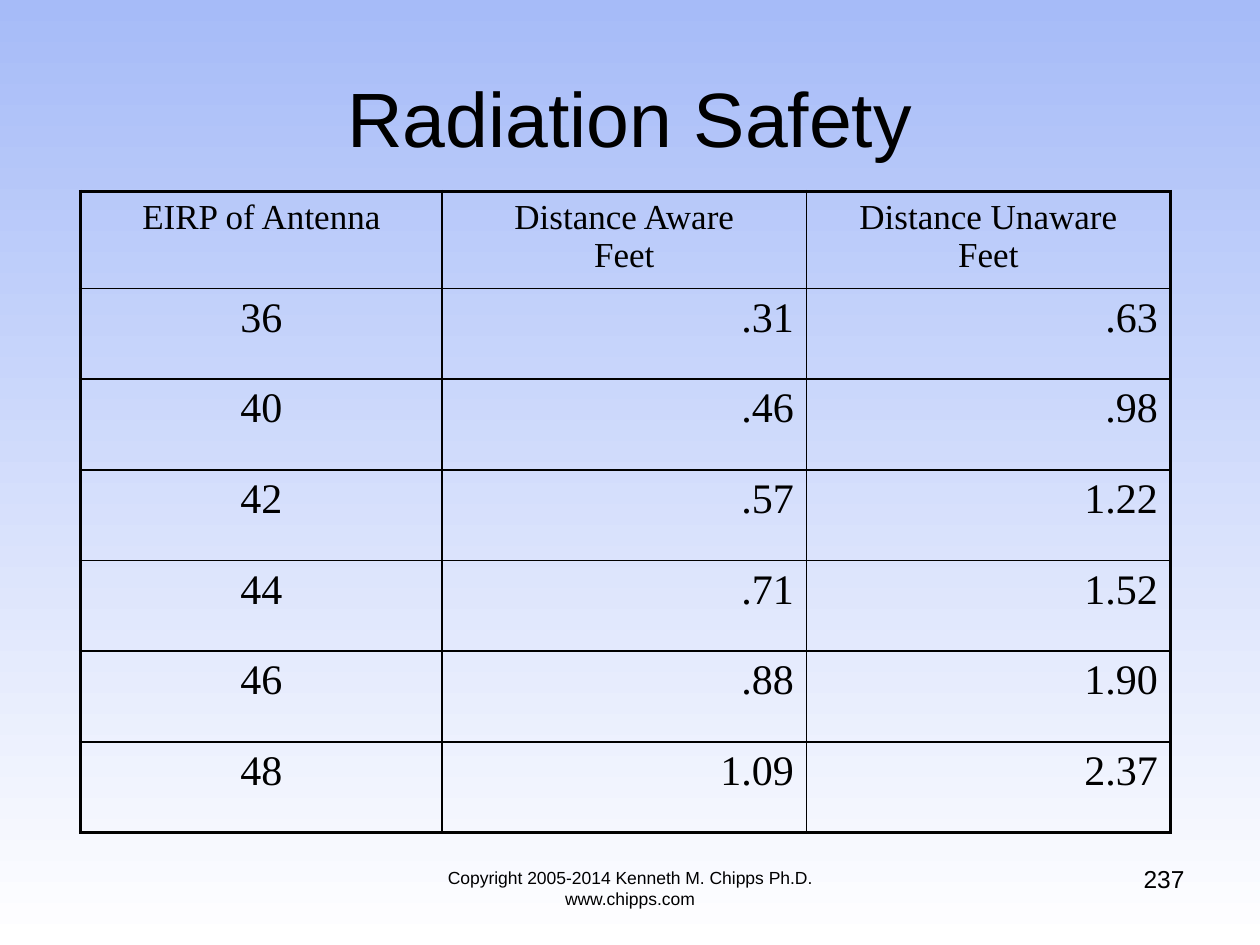
from lxml import etree
from pptx import Presentation
from pptx import util as u
from pptx.dml.color import RGBColor
from pptx.enum import text
from pptx.oxml.ns import qn

TITLE = "Radiation Safety"
HEADER = ("EIRP of Antenna", "Distance Aware\vFeet", "Distance Unaware\vFeet")
READINGS = [
    ("36", ".31", ".63"),
    ("40", ".46", ".98"),
    ("42", ".57", "1.22"),
    ("44", ".71", "1.52"),
    ("46", ".88", "1.90"),
    ("48", "1.09", "2.37"),
]
COPYRIGHT = "Copyright 2005-2014 Kenneth M. Chipps Ph.D. www.chipps.com"
PAGE = "237"

BLACK, SKY, WHITE = "000000", "A6BBF8", "FFFFFF"
COL_WIDTHS = (2.87, 2.89, 2.89)
HEADER_HEIGHT, ROW_HEIGHT = 0.77, 0.72
THICK, THIN = 2.25, 1
CENTER, RIGHT = text.PP_ALIGN.CENTER, text.PP_ALIGN.RIGHT


def color(value):
    return RGBColor.from_string(value)


def style(tf, font, size, align):
    for p in tf.paragraphs:
        p.alignment = align
        p.font.name, p.font.size = font, u.Pt(size)
        p.font.color.rgb = color(BLACK)


def set_borders(cell, widths):
    """Draw the cell's borders; widths are points for left, right, top, bottom."""
    tc_pr = cell._tc.get_or_add_tcPr()
    for i, (side, width) in enumerate(zip("LRTB", widths)):
        ln = etree.Element(qn(f"a:ln{side}"), w=str(u.Pt(width)))
        fill = etree.SubElement(ln, qn("a:solidFill"))
        etree.SubElement(fill, qn("a:srgbClr"), val=BLACK)
        tc_pr.insert(i, ln)


def add_readings(s):
    rows = [HEADER] + READINGS
    heights = [HEADER_HEIGHT] + [ROW_HEIGHT] * len(READINGS)
    frame = s.shapes.add_table(len(rows), len(HEADER), u.Inches(0.64), u.Inches(1.52),
                               u.Inches(sum(COL_WIDTHS)), u.Inches(sum(heights)))
    table = frame.table
    table.first_row = table.horz_banding = False
    for column, width in zip(table.columns, COL_WIDTHS):
        column.width = u.Inches(width)
    last_r, last_c = len(rows) - 1, len(HEADER) - 1
    for r, (values, height) in enumerate(zip(rows, heights)):
        table.rows[r].height = u.Inches(height)
        for c, value in enumerate(values):
            cell = table.cell(r, c)
            cell.text = value
            cell.fill.background()
            style(cell.text_frame, "Times New Roman", 24 if r else 20,
                  RIGHT if r and c else CENTER)
            outer = (c == 0, c == last_c, r == 0, r == last_r)
            set_borders(cell, [THICK if edge else THIN for edge in outer])


def add_footer(s, words, box, size, align):
    tf = s.shapes.add_textbox(*map(u.Inches, box)).text_frame
    tf.word_wrap = True
    tf.text = words
    style(tf, "Arial", size, align)


def main():
    prs = Presentation()
    prs.slide_width, prs.slide_height = u.Inches(10), u.Inches(7.5)
    s = prs.slides.add_slide(prs.slide_layouts[5])

    fill = s.background.fill
    fill.gradient()
    fill.gradient_angle = 270
    for stop, value in zip(fill.gradient_stops, (SKY, WHITE)):
        stop.color.rgb = color(value)

    title = s.shapes.title
    title.left, title.top, title.width, title.height = map(u.Inches, (0.5, 0.3, 9, 1.25))
    title.text_frame.text = TITLE
    title.text_frame.vertical_anchor = text.MSO_ANCHOR.MIDDLE
    style(title.text_frame, "Arial", 44, CENTER)

    add_readings(s)
    add_footer(s, PAGE, (7.17, 6.81, 2.33, 0.52), 14, RIGHT)
    add_footer(s, COPYRIGHT, (3, 6.83, 4, 0.52), 10, CENTER)
    prs.save("out.pptx")


if __name__ == "__main__":
    main()
